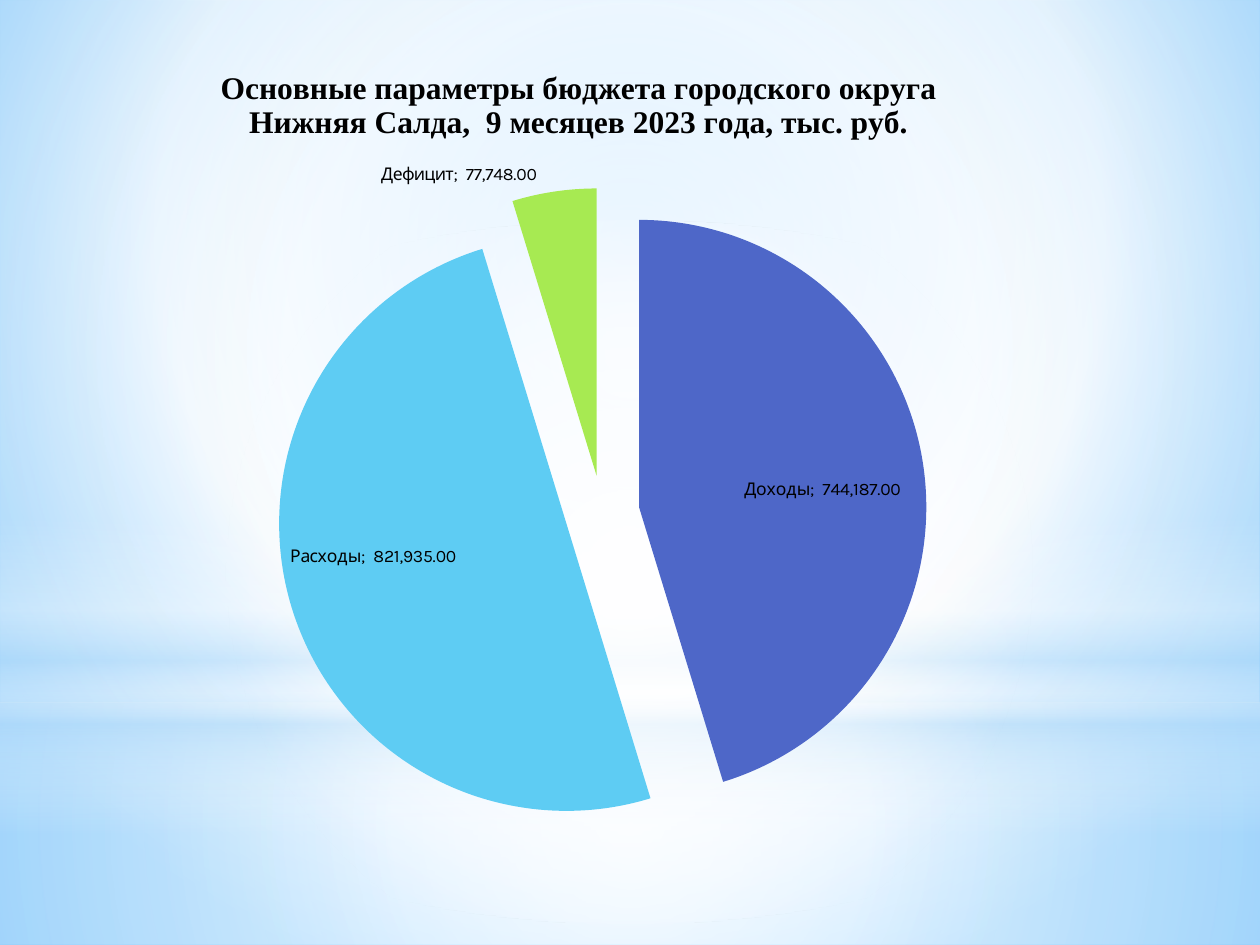
from lxml import etree
from pptx import Presentation, util as u
from pptx.chart.data import CategoryChartData
from pptx.dml.color import RGBColor
from pptx.enum import chart as ch, shapes
from pptx.oxml import parse_xml
from pptx.oxml.ns import nsdecls, qn

WHITE = RGBColor(0xFF, 0xFF, 0xFF)
HAZE = RGBColor(0xB4, 0xDC, 0xFA)
SKY = RGBColor(0x9E, 0xD5, 0xFF)
DEEP_SKY = RGBColor(0x5B, 0xB9, 0xFF)
BLACK = RGBColor(0, 0, 0)
INDIGO = RGBColor(0x4E, 0x67, 0xC8)
CYAN = RGBColor(0x5E, 0xCC, 0xF3)
LIME = RGBColor(0xA7, 0xEA, 0x52)
CENTRE = (50, 50, 50, 50)


def set_gradient(fill, parent, stops, focus=None):
    """Stops are (position %, colour, opacity %); no focus means top to bottom."""
    fill.solid()
    stop_xml = "".join(
        f'<a:gs pos="{pos * 1000}"><a:srgbClr val="{colour}">'
        f'<a:alpha val="{opacity * 1000}"/></a:srgbClr></a:gs>'
        for pos, colour, opacity in stops)
    course = '<a:lin ang="5400000" scaled="0"/>'
    if focus:
        sides = " ".join(f'{side}="{v * 1000}"' for side, v in zip("ltrb", focus))
        course = f'<a:path path="circle"><a:fillToRect {sides}/></a:path>'
    solid = parent.find(qn("a:solidFill"))
    parent.replace(solid, parse_xml(
        f'<a:gradFill {nsdecls("a")} rotWithShape="1">'
        f'<a:gsLst>{stop_xml}</a:gsLst>{course}</a:gradFill>'))


deck = Presentation()
deck.slide_width, deck.slide_height = u.Cm(25.4), u.Cm(19.05)
slide = deck.slides.add_slide(deck.slide_layouts[6])

# Sky background
sky_fill = slide.background.fill
sky_fill.solid()
set_gradient(sky_fill, slide._element.find(".//" + qn("p:bgPr")),
             [(0, SKY, 100), (60, WHITE, 100), (100, DEEP_SKY, 100)],
             (20, 10, 20, 60))

# Haze layers: shape, top, height, stops, focus
RECT, OVAL = shapes.MSO_SHAPE.RECTANGLE, shapes.MSO_SHAPE.OVAL
haze_layers = [
    (RECT, 14.17, 4.88, [(0, WHITE, 91), (37, WHITE, 76), (100, HAZE, 79)], CENTRE),
    (RECT, 0, 14.17, [(0, WHITE, 89), (48, WHITE, 62), (100, HAZE, 79)], CENTRE),
    (RECT, 10.46, 6.35, [(0, WHITE, 0), (29, WHITE, 30), (45, HAZE, 40),
                         (55, WHITE, 26), (65, HAZE, 60), (100, WHITE, 0)], None),
    (OVAL, 4.45, 14.17, [(0, WHITE, 100), (56, WHITE, 0)], CENTRE),
]
for outline, top, height, stops, focus in haze_layers:
    haze = slide.shapes.add_shape(outline, 0, u.Cm(top), deck.slide_width, u.Cm(height))
    haze.shadow.inherit = False
    haze.line.fill.background()
    set_gradient(haze.fill, haze._element.spPr, stops, focus)

# Budget pie
budget = CategoryChartData()
budget.categories = ["Доходы", "Расходы", "Дефицит"]
budget.add_series("Series 1", (744187, 821935, 77748))
pie = slide.shapes.add_chart(ch.XL_CHART_TYPE.PIE, u.Cm(2.18), u.Cm(0.79),
                             u.Cm(18.97), u.Cm(16.46), budget).chart
pie.has_legend = False
pie.font.name, pie.font.size = "Karla", u.Pt(18)
pie.font.color.rgb = BLACK

# Heading
heading = pie.chart_title.text_frame
heading.text = ("Основные параметры бюджета городского округа "
                "Нижняя Салда,  9 месяцев 2023 года, тыс. руб.")
heading_format = {"name": "Times New Roman", "size": u.Pt(18), "bold": True}
heading_font = heading.paragraphs[0].runs[0].font
for key, value in heading_format.items():
    setattr(heading_font, key, value)
heading_font.color.rgb = BLACK

# Slices, pulled apart
plot = pie.plots[0]
plot.vary_by_categories = True
amounts = plot.series[0]
for i, colour in enumerate((INDIGO, CYAN, LIME)):
    slice_fill = amounts.points[i].format.fill
    slice_fill.solid()
    slice_fill.fore_color.rgb = colour
explosion = parse_xml(f'<c:explosion {nsdecls("c")} val="13"/>')
amounts._element.find(qn("c:dPt")).addprevious(explosion)

# Slice labels
labels = amounts.data_labels
label_format = {
    "show_value": True, "show_category_name": True, "show_percentage": False,
    "position": ch.XL_LABEL_POSITION.BEST_FIT, "number_format_is_linked": False,
    "number_format": '_-* #,##0.00_р_._-;\\-* #,##0.00_р_._-;_-* "-"??_р_._-;_-@_-',
}
for key, value in label_format.items():
    setattr(labels, key, value)
labels.font.name, labels.font.size = "Karla", u.Pt(10)
labels.font.color.rgb = BLACK

# Place of the pie within the chart
plot_area = pie._chartSpace.chart.plotArea
for old in plot_area.findall(qn("c:layout")):
    plot_area.remove(old)
layout = etree.Element(qn("c:layout"))
manual = etree.SubElement(layout, qn("c:manualLayout"))
for tag, value in (("layoutTarget", "inner"), ("xMode", "edge"), ("yMode", "edge"),
                   ("x", "0.18"), ("y", "0.18"), ("w", "0.69"), ("h", "0.8")):
    etree.SubElement(manual, qn("c:" + tag)).set("val", value)
plot_area.insert(0, layout)

deck.save("out.pptx")
